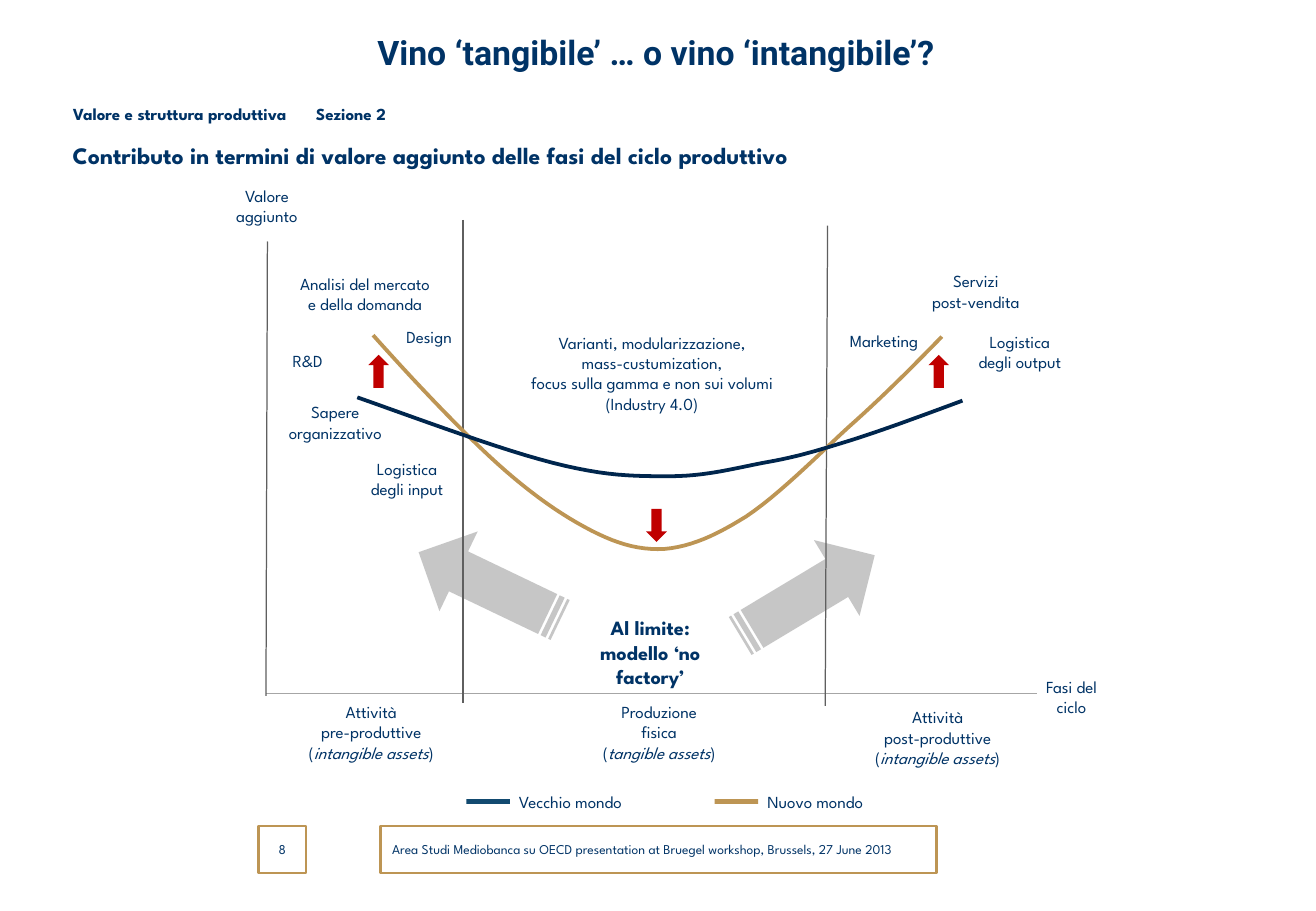
from itertools import pairwise

from lxml.etree import SubElement
from pptx import Presentation
from pptx.dml.color import RGBColor
from pptx.enum.shapes import MSO_CONNECTOR, MSO_SHAPE
from pptx.enum.text import MSO_ANCHOR, MSO_AUTO_SIZE, PP_ALIGN
from pptx.oxml.ns import qn
from pptx.util import Cm, Pt

NAVY, GOLD, GREY, RED = "003366", "BD9554", "5F5F5F", "C00000"
BODY_FONT = "League Spartan"

LABELS = [
    (1.08, 0.01, ["Valore", "aggiunto"]),
    (3.13, 1.84, ["Analisi del mercato", "e della domanda"]),
    (1.93, 3.46, ["R&D"]),
    (4.47, 2.96, ["Design"]),
    (2.51, 4.53, ["Sapere", "organizzativo"]),
    (4.01, 5.72, ["Logistica", "degli input"]),
    (9.13, 3.08, ["Varianti, modularizzazione,", "mass-custumization,",
                  "focus sulla gamma e non sui volumi", "(Industry 4.0)"]),
    (13.98, 3.03, ["Marketing"]),
    (15.9, 1.79, ["Servizi", "post-vendita"]),
    (16.82, 3.06, ["Logistica", "degli output"]),
    (17.9, 10.27, ["Fasi del", "ciclo"]),
    (3.26, 10.8, ["Attività", "pre-produttive", "(*intangible assets*)"]),
    (9.28, 10.8, ["Produzione", "fisica", "(*tangible assets*)"]),
    (15.1, 10.91, ["Attività", "post-produttive", "(*intangible assets*)"]),
]
AXES = [
    (1.06, 10.75, 17.17, 10.75, "A6A6A6"),
    (5.18, 0.85, 5.18, 10.96, GREY),
    (12.8, 0.97, 12.75, 11.01, GREY),
    (1.09, 1.3, 1.06, 10.8, GREY),
]
NEW_WORLD = [
    (3.3, 3.26), (4.14, 4.2), (5, 5.11), (5.74, 5.8), (6.45, 6.46),
    (7.11, 6.94), (7.72, 7.27), (8.33, 7.6), (8.81, 7.76), (9.39, 7.73),
    (9.95, 7.68), (10.46, 7.45), (11.1, 7.05), (11.76, 6.61), (12.54, 5.83),
    (13.23, 5.19), (13.92, 4.58), (14.55, 3.95), (15.19, 3.29),
]
OLD_WORLD = [
    (15.62, 4.63), (14.73, 4.96), (13.84, 5.29), (13.15, 5.5), (12.44, 5.72),
    (12.04, 5.83), (11.45, 5.93), (10.84, 6.05), (10.23, 6.21), (9.5, 6.21),
    (8.76, 6.21), (8.15, 6.21), (7.06, 5.93), (5.96, 5.65), (4.47, 5.09),
    (2.97, 4.56),
]


def color(value):
    """Turn a hex string into a colour."""
    return RGBColor.from_string(value)


def place(item, left, top, width, height):
    """Move and size an object in centimetres."""
    item.left, item.top, item.width, item.height = map(Cm, (left, top, width, height))


def write(frame, lines, size=10, bold=False, align=PP_ALIGN.CENTER,
          font=BODY_FONT, anchor=MSO_ANCHOR.TOP, wrap=True):
    """Fill a text frame with lines; asterisks enclose italics."""
    frame.word_wrap = wrap
    frame.auto_size = MSO_AUTO_SIZE.NONE
    frame.vertical_anchor = anchor
    for index, line in enumerate(lines):
        para = frame.add_paragraph() if index else frame.paragraphs[0]
        para.alignment = align
        para.space_before = Pt(0)
        para.font.name, para.font.size, para.font.bold = font, Pt(size), bold
        para.font.color.rgb = color(NAVY)
        for part, words in enumerate(line.split("*")):
            span = para.add_run()
            span.text = words
            if part % 2:
                span.font.italic = True


def add_text(page, left, top, width, height, lines, **style):
    """Add a text box."""
    box = page.shapes.add_textbox(*map(Cm, (left, top, width, height)))
    write(box.text_frame, lines, **style)


def add_block(page, kind, left, top, width, height, fill=None, line=None):
    """Add a preset shape with an optional fill and outline."""
    shape = page.shapes.add_shape(kind, *map(Cm, (left, top, width, height)))
    shape.shadow.inherit = False
    if fill:
        shape.fill.solid()
        shape.fill.fore_color.rgb = color(fill)
    else:
        shape.fill.background()
    if line:
        shape.line.color.rgb = color(line)
        shape.line.width = Pt(1.5)
    else:
        shape.line.fill.background()
    return shape


def add_curve(page, box, points, stroke):
    """Draw a smooth open line through cubic control points."""
    steps = 12
    track = [points[0]]
    for start in range(0, len(points) - 1, 3):
        for step in range(1, steps + 1):
            curve = points[start:start + 4]
            share = step / steps
            while len(curve) > 1:
                curve = [tuple(a + (b - a) * share for a, b in zip(p, q))
                         for p, q in pairwise(curve)]
            track.append(curve[0])
    track = [(Cm(box[0] + x), Cm(box[1] + y)) for x, y in track]
    builder = page.shapes.build_freeform(*track[0])
    builder.add_line_segments(track[1:], close=False)
    shape = builder.convert_to_shape()
    shape.shadow.inherit = False
    shape.fill.background()
    shape.line.color.rgb = color(stroke)
    shape.line.width = Pt(2.25)


def add_header(page, box):
    """Place the title, the section line and the chart heading."""
    left, top, width, height = box
    title, section = page.placeholders
    place(title, left + 2.36, top, 20.17, 1.32)
    write(title.text_frame, ["Vino ‘tangibile’ … o vino ‘intangibile’?"],
          size=20, bold=True, font="Roboto")
    place(section, left, top + 1.45, width, 0.79)
    properties = section.text_frame.paragraphs[0]._p.get_or_add_pPr()
    properties.set("marL", "0")
    properties.set("indent", "0")
    SubElement(properties, qn("a:buNone"))
    tabs = SubElement(properties, qn("a:tabLst"))
    SubElement(tabs, qn("a:tab"), pos=str(Cm(4.92)), algn="l")
    write(section.text_frame, ["Valore e struttura produttiva\tSezione 2"],
          bold=True, align=PP_ALIGN.LEFT, anchor=MSO_ANCHOR.MIDDLE)
    add_text(page, left, top + 2.29, width, height - 2.29,
             ["Contributo in termini di valore aggiunto delle fasi del ciclo produttivo"],
             size=14, bold=True, align=PP_ALIGN.LEFT)


def add_value_chart(page, box):
    """Draw the value curves with their axes, arrows and labels."""
    left, top = box[:2]
    add_text(page, left + 7.29, top + 9, 3.61, 1.8,
             ["Al limite: modello ‘no factory’"], size=12, bold=True)
    for x, y, angle in [(4.09, 7.58, 205.6), (10.74, 7.78, 329)]:
        arrow = add_block(page, MSO_SHAPE.STRIPED_RIGHT_ARROW,
                          left + x, top + y, 3.28, 1.85, "8F8F8F")
        arrow.rotation = angle
        tint = arrow.fill._xPr.find(".//" + qn("a:srgbClr"))
        SubElement(tint, qn("a:alpha"), val="50000")
    for x1, y1, x2, y2, stroke in AXES:
        axis = page.shapes.add_connector(
            MSO_CONNECTOR.STRAIGHT, Cm(left + x1), Cm(top + y1), Cm(left + x2), Cm(top + y2))
        axis.line.color.rgb = color(stroke)
        axis.line.width = Pt(0.75)
        SubElement(axis._element.spPr, qn("a:effectLst"))
    add_curve(page, box, NEW_WORLD, GOLD)
    add_curve(page, box, OLD_WORLD, "00264D")
    for kind, x, y in [(MSO_SHAPE.UP_ARROW, 3.2, 3.67),
                       (MSO_SHAPE.DOWN_ARROW, 9.01, 6.89),
                       (MSO_SHAPE.UP_ARROW, 14.91, 3.67)]:
        add_block(page, kind, left + x, top + y, 0.43, 0.69, RED)
    for center, y, lines in LABELS:
        width = max(map(len, lines)) * 0.18 + 0.6
        add_text(page, left + center - width / 2, top + y, width,
                 0.26 + 0.43 * len(lines), lines, wrap=False)


def add_legend(page, box):
    """Place the colour keys and their names."""
    left, top, width, height = box
    for index, (name, fill) in enumerate([("Vecchio mondo", "124A70"), ("Nuovo mondo", GOLD)]):
        x = left + index * width / 2
        add_block(page, MSO_SHAPE.RECTANGLE, x, top + 0.28, 0.91, 0.1, fill)
        add_text(page, x + 0.85, top, 3.3, height, [name], align=PP_ALIGN.LEFT, wrap=False)


def add_footer(page, box):
    """Place the framed page number and source."""
    left, top, width, height = box
    source = "Area Studi Mediobanca su OECD presentation at Bruegel workshop, Brussels, 27 June 2013"
    for x, span, words, align in [(0, height, "8", PP_ALIGN.CENTER),
                                  (2.54, width - 2.54, source, PP_ALIGN.LEFT)]:
        frame = add_block(page, MSO_SHAPE.RECTANGLE, left + x, top, span, height, line=GOLD)
        write(frame.text_frame, [words], size=8, align=align, anchor=MSO_ANCHOR.MIDDLE)


def main():
    """Build and save the deck."""
    deck = Presentation()
    deck.slide_width, deck.slide_height = Cm(27.51), Cm(19.05)
    page = deck.slides.add_slide(deck.slide_layouts[1])
    add_header(page, (1.27, 0.53, 25, 3.43))
    add_value_chart(page, (4.5, 3.75, 19, 12.5))
    add_legend(page, (9.75, 16.43, 10.38, 0.69))
    add_footer(page, (5.41, 17.27, 14.17, 0.99))
    deck.save("out.pptx")


if __name__ == "__main__":
    main()
